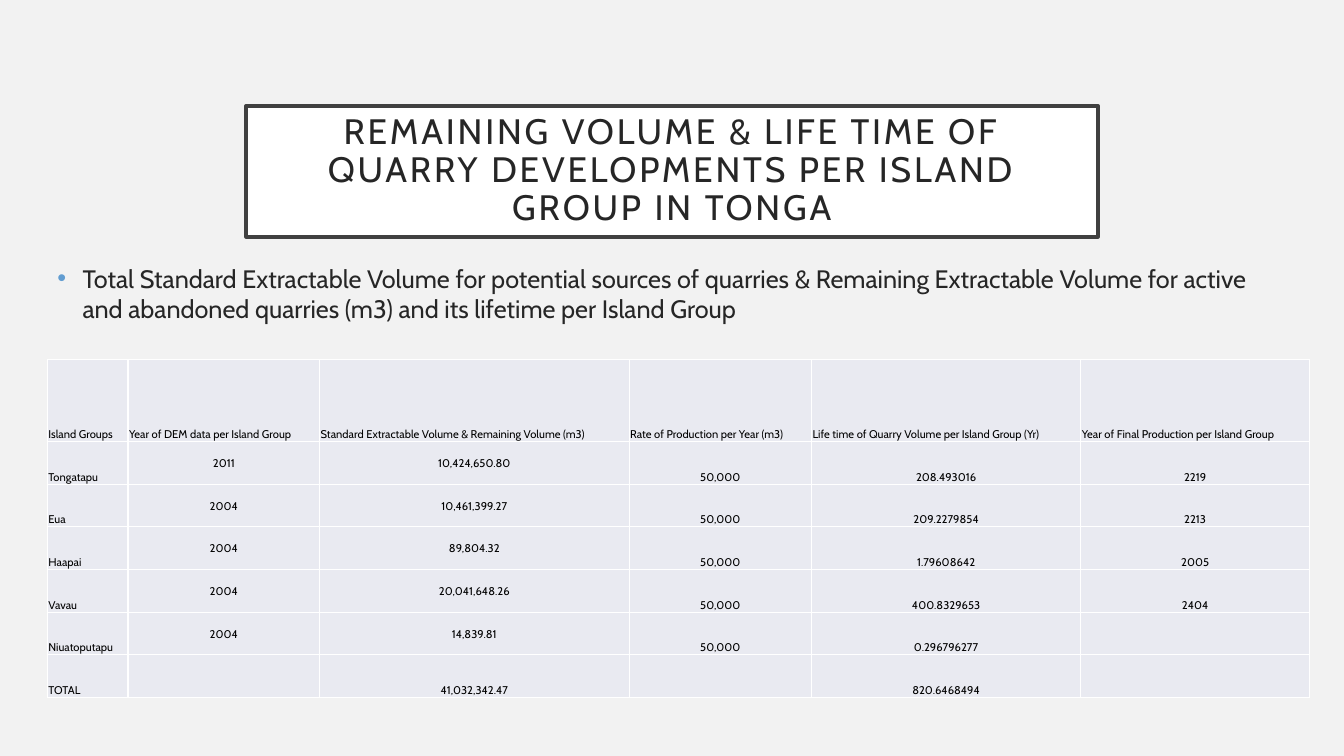
import pptx
import pptx.util
import pptx.dml.color
import pptx.enum.text
import pptx.oxml
import pptx.oxml.ns

Inches, Pt = pptx.util.Inches, pptx.util.Pt
RGBColor = pptx.dml.color.RGBColor
Align, Anchor = pptx.enum.text.PP_ALIGN, pptx.enum.text.MSO_ANCHOR

HEADING = "REMAINING VOLUME & LIFE TIME OF QUARRY DEVELOPMENTS PER ISLAND GROUP IN TONGA"
SUMMARY = ("Total Standard Extractable Volume for potential sources of quarries & Remaining "
           "Extractable Volume for active and abandoned quarries (m3) and its lifetime per Island Group")
QUARRIES = [
    ("Island Groups", "Year of DEM data per Island Group",
     "Standard Extractable Volume & Remaining Volume (m3)", "Rate of Production per Year (m3)",
     "Life time of Quarry Volume per Island Group (Yr)", "Year of Final Production per Island Group"),
    ("Tongatapu", "2011", "10,424,650.80", "50,000", "208.493016", "2219"),
    ("Eua", "2004", "10,461,399.27", "50,000", "209.2279854", "2213"),
    ("Haapai", "2004", "89,804.32", "50,000", "1.79608642", "2005"),
    ("Vavau", "2004", "20,041,648.26", "50,000", "400.8329653", "2404"),
    ("Niuatoputapu", "2004", "14,839.81", "50,000", "0.296796277", ""),
    ("TOTAL", "", "41,032,342.47", "", "820.6468494", ""),
]
COLUMN_WIDTHS = [0.8, 1.9, 3.07, 1.81, 2.67, 2.27]
HEADER_HEIGHT, TABLE_HEIGHT = 0.81, 3.35
LEFT = 0.47
FONT = "Cabin"
PAPER = RGBColor(0xF2, 0xF2, 0xF2)
WHITE = RGBColor(0xFF, 0xFF, 0xFF)
FRAME = RGBColor(0x40, 0x40, 0x40)
INK = RGBColor(0x26, 0x26, 0x26)
BLACK = RGBColor(0, 0, 0)
BULLET = RGBColor(0x62, 0x9D, 0xD1)
CELL = RGBColor(0xE9, 0xEA, 0xF1)


def add_run(paragraph, text, size, color):
    run = paragraph.add_run()
    run.text = text
    run.font.name = FONT
    run.font.size = Pt(size)
    run.font.color.rgb = color
    return run


def add_xml(parent, body):
    parent.append(pptx.oxml.parse_xml(body.replace(" ", f" {pptx.oxml.ns.nsdecls('a')} ", 1)))


def add_heading(slide):
    heading = slide.shapes.title
    heading.left, heading.top = Inches(2.44), Inches(1.05)
    heading.width, heading.height = Inches(8.45), Inches(1.3)
    heading.fill.solid()
    heading.fill.fore_color.rgb = WHITE
    heading.line.color.rgb = FRAME
    heading.line.width = Pt(2.5)
    frame = heading.text_frame
    frame.word_wrap = True
    frame.auto_size = pptx.enum.text.MSO_AUTO_SIZE.NONE
    frame.vertical_anchor = Anchor.MIDDLE
    frame.margin_left = frame.margin_right = frame.margin_top = frame.margin_bottom = Inches(0.2)
    paragraph = frame.paragraphs[0]
    paragraph.alignment = Align.CENTER
    paragraph.line_spacing = 0.9
    run = add_run(paragraph, HEADING, 25.2, INK)
    run.font._element.set("spc", "200")


def add_summary(slide):
    summary = slide.shapes.add_textbox(Inches(LEFT), Inches(2.56), Inches(12.01), Inches(0.9))
    summary.text_frame.word_wrap = True
    paragraph = summary.text_frame.paragraphs[0]
    properties = paragraph._p.get_or_add_pPr()
    properties.set("marL", str(Inches(0.25)))
    properties.set("indent", str(-Inches(0.25)))
    add_xml(properties, f'<a:buClr ><a:srgbClr val="{BULLET}"/></a:buClr>')
    add_xml(properties, '<a:buFont typeface="Arial"/>')
    add_xml(properties, '<a:buChar char="•"/>')
    add_run(paragraph, SUMMARY, 18, INK)


def style_cell(cell):
    cell.margin_left = cell.margin_right = cell.margin_top = Inches(0.01)
    cell.margin_bottom = 0
    for side in ("lnL", "lnR", "lnT", "lnB"):
        add_xml(cell._tc.get_or_add_tcPr(),
                f'<a:{side} w="{Pt(1)}"><a:solidFill><a:srgbClr val="{WHITE}"/></a:solidFill></a:{side}>')
    cell.fill.solid()
    cell.fill.fore_color.rgb = CELL


def add_quarries(slide):
    table = slide.shapes.add_table(
        len(QUARRIES), len(COLUMN_WIDTHS), Inches(LEFT), Inches(3.57),
        Inches(sum(COLUMN_WIDTHS)), Inches(TABLE_HEIGHT)).table
    table.first_row = table.horz_banding = False
    for column, width in zip(table.columns, COLUMN_WIDTHS):
        column.width = Inches(width)
    body_height = (TABLE_HEIGHT - HEADER_HEIGHT) / (len(QUARRIES) - 1)
    last = len(QUARRIES) - 1
    for r, entries in enumerate(QUARRIES):
        table.rows[r].height = Inches(body_height if r else HEADER_HEIGHT)
        for c, entry in enumerate(entries):
            cell = table.cell(r, c)
            style_cell(cell)
            raised = 0 < r < last and c in (1, 2)
            cell.vertical_anchor = Anchor.MIDDLE if raised else Anchor.BOTTOM
            if entry:
                paragraph = cell.text_frame.paragraphs[0]
                paragraph.alignment = Align.CENTER if r and c else Align.LEFT
                add_run(paragraph, entry, 8, BLACK)


def main():
    deck = pptx.Presentation()
    deck.slide_width, deck.slide_height = Inches(13.33), Inches(7.5)
    slide = deck.slides.add_slide(deck.slide_layouts[5])
    slide.background.fill.solid()
    slide.background.fill.fore_color.rgb = PAPER
    add_heading(slide)
    add_summary(slide)
    add_quarries(slide)
    deck.save("out.pptx")


if __name__ == "__main__":
    main()
